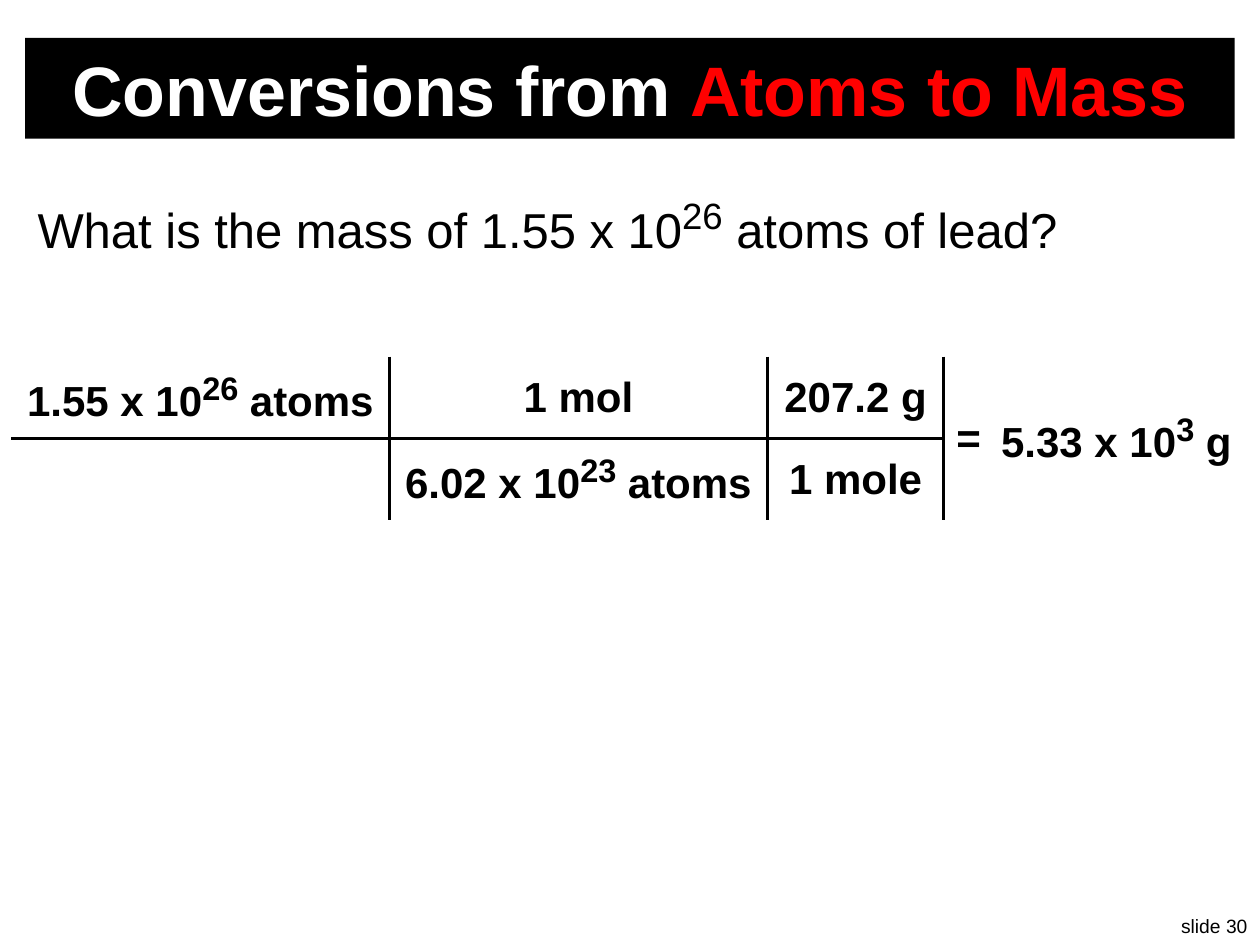
from lxml.etree import SubElement
from pptx import Presentation
from pptx.dml.color import RGBColor
from pptx.enum.shapes import MSO_SHAPE
from pptx.enum.text import MSO_ANCHOR, PP_ALIGN
from pptx.oxml.ns import qn
from pptx.util import Inches, Pt

BLACK = RGBColor(0x00, 0x00, 0x00)
WHITE = RGBColor(0xFF, 0xFF, 0xFF)
RED = RGBColor(0xFF, 0x00, 0x00)


class SlideBuilder:
    """Holds the text style and the current slide."""

    font = "Arial"
    rule_width = Pt(2.25)
    sup_extra = 8  # superscripts are set larger than the base text

    def __init__(self, prs):
        self.slide = prs.slides.add_slide(prs.slide_layouts[6])

    def add_runs(self, p, text, size, color=BLACK, bold=False):
        """Add runs to a paragraph; text between carets is superscript."""
        for i, part in enumerate(text.split("^")):
            raised = i % 2 == 1
            r = p.add_run()
            r.text = part
            style = {"name": self.font, "bold": bold,
                     "size": Pt(size + self.sup_extra if raised else size)}
            for name, value in style.items():
                setattr(r.font, name, value)
            r.font.color.rgb = color
            if raised:
                r.font._element.set("baseline", "30000")

    def banner(self, box, parts, size):
        sp = self.slide.shapes.add_shape(MSO_SHAPE.RECTANGLE, *map(Inches, box))
        sp.shadow.inherit = False
        sp.fill.solid()
        sp.fill.fore_color.rgb = BLACK
        sp.line.fill.background()
        tf = sp.text_frame
        tf.vertical_anchor = MSO_ANCHOR.MIDDLE
        p = tf.paragraphs[0]
        p.alignment = PP_ALIGN.CENTER
        for text, color in parts:
            self.add_runs(p, text, size, color, bold=True)

    def text(self, box, text, size, wrap=True, **layout):
        tf = self.slide.shapes.add_textbox(*map(Inches, box)).text_frame
        tf.word_wrap = wrap
        p = tf.paragraphs[0]
        for name, value in layout.items():
            setattr(p, name, value)
        self.add_runs(p, text, size)

    def borders(self, cell, ruled):
        """Draw the sides named in ruled and clear the others."""
        tcPr = cell._tc.get_or_add_tcPr()
        for side in "LRTB":
            ln = SubElement(tcPr, qn("a:ln" + side), w=str(self.rule_width))
            if side in ruled:
                fill = SubElement(ln, qn("a:solidFill"))
                SubElement(fill, qn("a:srgbClr"), val=str(BLACK))
            else:
                SubElement(ln, qn("a:noFill"))

    def table(self, left, top, widths, row_height, rows, rules, merged, size):
        box = (left, top, sum(widths), row_height * len(rows))
        table = self.slide.shapes.add_table(
            len(rows), len(widths), *map(Inches, box)).table
        table.first_row = table.horz_banding = False
        for col, width in zip(table.columns, widths):
            col.width = Inches(width)
        for row in table.rows:
            row.height = Inches(row_height)
        for col in merged:
            table.cell(0, col).merge(table.cell(len(rows) - 1, col))
        for i, row in enumerate(rows):
            for j, text in enumerate(row):
                cell = table.cell(i, j)
                self.borders(cell, rules[i][j])
                cell.fill.background()
                cell.vertical_anchor = MSO_ANCHOR.MIDDLE
                p = cell.text_frame.paragraphs[0]
                p.alignment = PP_ALIGN.CENTER
                if text:
                    self.add_runs(p, text, size, bold=True)


def main():
    prs = Presentation()
    prs.slide_width, prs.slide_height = Inches(10), Inches(7.5)
    s = SlideBuilder(prs)

    # Slide number
    s.text((9.25, 7.21, 0.75, 0.29), "slide 30", 11, wrap=False,
           alignment=PP_ALIGN.RIGHT)

    # Title and question
    s.banner((0.2, 0.3, 9.6, 0.8),
             [("Conversions from ", WHITE), ("Atoms to Mass", RED)], 40)
    s.text((0.2, 1.42, 9.6, 1.14),
           "What is the mass of 1.55 x 10^26^ atoms of lead?", 28,
           space_before=Pt(12))

    # Conversion factors: numerators over denominators, then the result
    rows = [
        ["1.55 x 10^26^ atoms", "1 mol", "207.2 g", "=", "5.33 x 10^3^ g"],
        ["", "6.02 x 10^23^ atoms", "1 mole", "", ""],
    ]
    rules = [["RB", "LRB", "LRB", "L", ""],
             ["RT", "LRT", "LRT", "L", ""]]
    s.table(0.09, 2.83, [3, 3, 1.4, 0.32, 2.1], 0.65, rows, rules,
            merged=(3, 4), size=24)

    prs.save("out.pptx")


if __name__ == "__main__":
    main()
